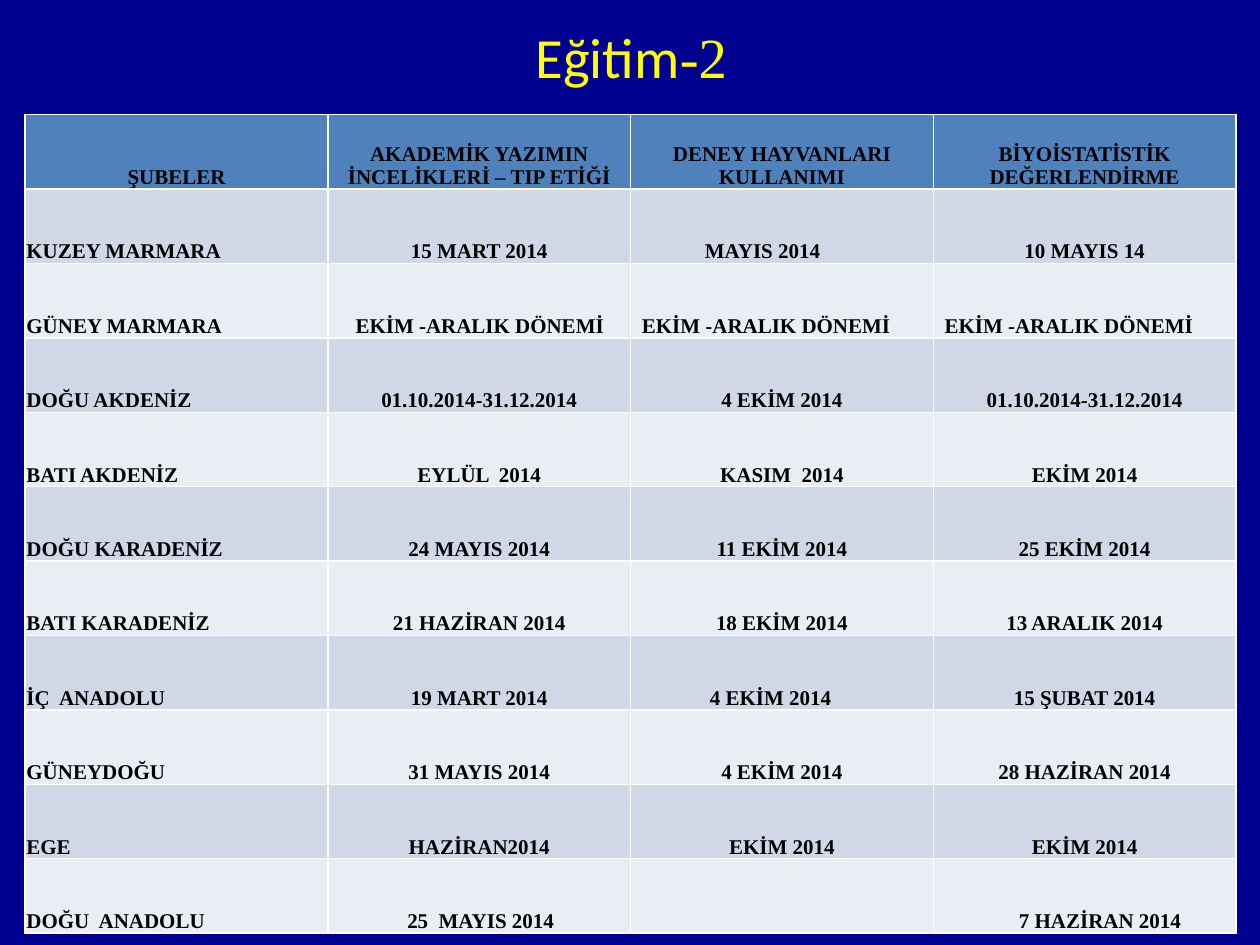
from pptx import Presentation
from pptx.dml.color import RGBColor
from pptx.enum.text import MSO_ANCHOR, PP_ALIGN
from pptx.util import Inches, Pt

LEFT, CENTER = PP_ALIGN.LEFT, PP_ALIGN.CENTER
MIDDLE, BOTTOM = MSO_ANCHOR.MIDDLE, MSO_ANCHOR.BOTTOM
SERIF = "Times New Roman"


def paint(fill, color):
    fill.solid()
    fill.fore_color.rgb = RGBColor.from_string(color)


def style(run, font, size, color, bold=False):
    run.font.name = font
    run.font.size = Pt(size)
    run.font.bold = bold
    run.font.color.rgb = RGBColor.from_string(color)


deck = Presentation()
deck.slide_width, deck.slide_height = Inches(10), Inches(7.5)
slide = deck.slides.add_slide(deck.slide_layouts[5])
paint(slide.background.fill, "000090")

title = slide.shapes.title
title.left, title.top = Inches(0.51), Inches(0.13)
title.width, title.height = Inches(9), Inches(0.63)
title.text_frame.vertical_anchor = MIDDLE
head = title.text_frame.paragraphs[0]
head.alignment = CENTER
for text, font in (("Eğitim", "Calibri"), ("-2", SERIF)):
    run = head.add_run()
    run.text = text
    style(run, font, 32.4, "FFFF00")

rows = [
    ["ŞUBELER", "AKADEMİK YAZIMIN İNCELİKLERİ – TIP ETİĞİ",
     "DENEY HAYVANLARI KULLANIMI", "BİYOİSTATİSTİK DEĞERLENDİRME"],
    ["KUZEY MARMARA", "15 MART 2014", "MAYIS 2014", "10 MAYIS 14"],
    ["GÜNEY MARMARA"] + ["EKİM -ARALIK DÖNEMİ"] * 3,
    ["DOĞU AKDENİZ", "01.10.2014-31.12.2014", "4 EKİM 2014", "01.10.2014-31.12.2014"],
    ["BATI AKDENİZ", "EYLÜL  2014", "KASIM  2014", "EKİM 2014"],
    ["DOĞU KARADENİZ", "24 MAYIS 2014", "11 EKİM 2014", "25 EKİM 2014"],
    ["BATI KARADENİZ", "21 HAZİRAN 2014", "18 EKİM 2014", "13 ARALIK 2014"],
    ["İÇ  ANADOLU", "19 MART 2014", "4 EKİM 2014", "15 ŞUBAT 2014"],
    ["GÜNEYDOĞU", "31 MAYIS 2014", "4 EKİM 2014", "28 HAZİRAN 2014"],
    ["EGE", "HAZİRAN2014", "EKİM 2014", "EKİM 2014"],
    ["DOĞU  ANADOLU", "25  MAYIS 2014", "", "7 HAZİRAN 2014"],
]
indents = {
    (1, 2): 0.59, (2, 1): 0.22, (2, 2): 0.09, (2, 3): 0.09,
    (7, 2): 0.63, (8, 2): 0.72, (10, 1): 0.63, (10, 3): 0.68,
}

table = slide.shapes.add_table(
    len(rows), len(rows[0]), Inches(0.2), Inches(0.91), Inches(9.61), Inches(6.5)
).table
for r, row in enumerate(rows):
    for c, text in enumerate(row):
        cell = table.cell(r, c)
        paint(cell.fill, "4F81BD" if r == 0 else "D0D8E8" if r % 2 else "E9EDF4")
        cell.vertical_anchor = BOTTOM
        cell.margin_left = Inches(indents.get((r, c), 0.01))
        cell.margin_right = cell.margin_top = Inches(0.01)
        cell.margin_bottom = 0
        cell.text_frame.text = text
        para = cell.text_frame.paragraphs[0]
        flush = (r, c) in indents or (r > 0 and c == 0)
        para.alignment = LEFT if flush else CENTER
        for run in para.runs:
            style(run, SERIF, 12, "000000", True)

deck.save("out.pptx")
